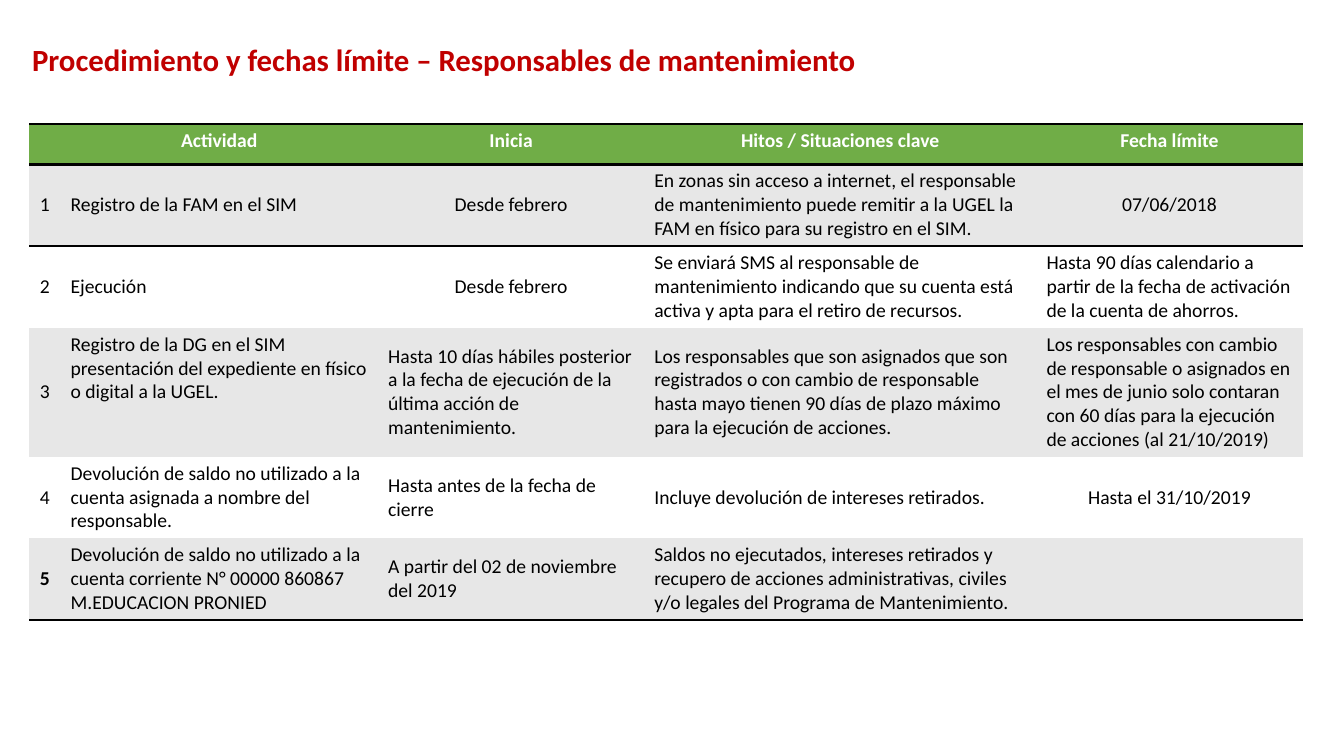
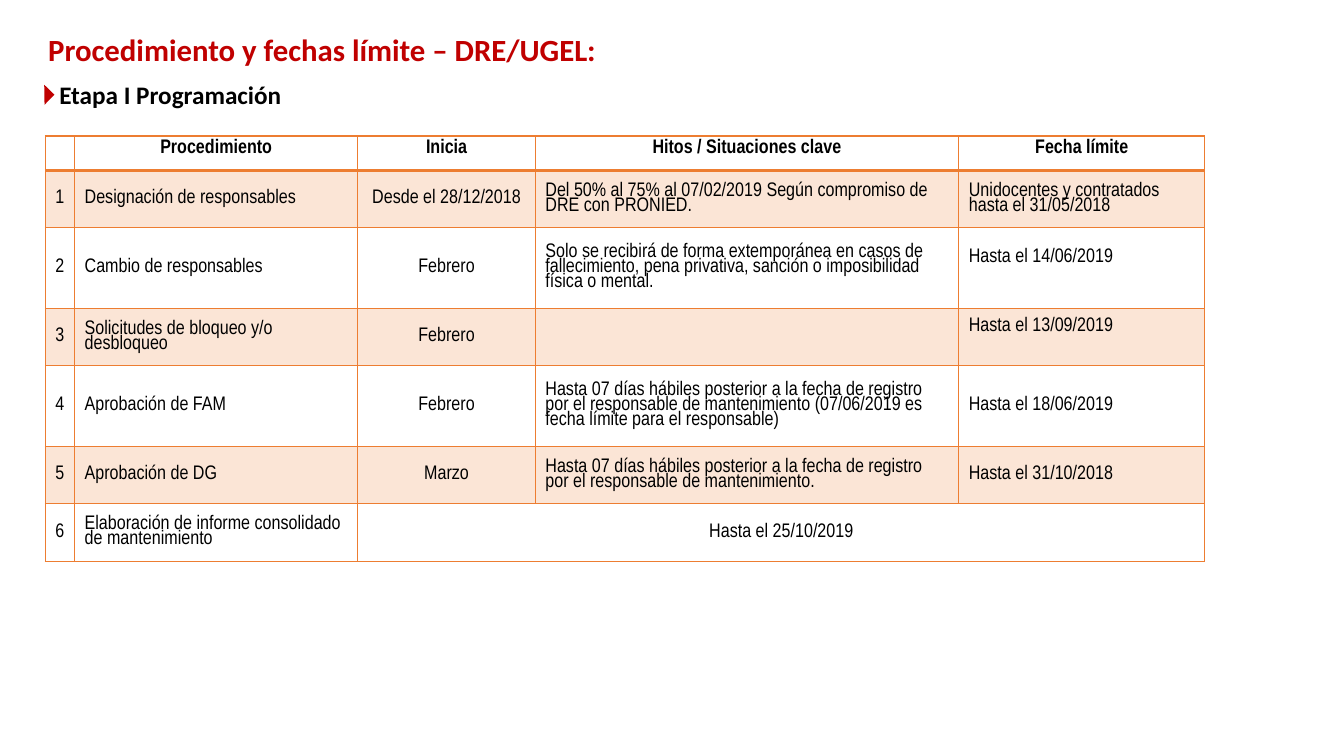
from lxml.etree import SubElement
from pptx import Presentation
from pptx.dml.color import RGBColor
from pptx.enum.shapes import MSO_SHAPE as Shape
from pptx.enum.text import MSO_ANCHOR as Anchor, PP_ALIGN as Align
from pptx.oxml.ns import qn
from pptx.util import Inches, Pt

RED, BLACK, WHITE = "C00000", "000000", "FFFFFF"
GREEN, GREY = "70AD47", "E7E7E7"
ORANGE, PEACH = "ED7D31", "FBE5D6"
PLAIN_STYLE = "{2D5ABB26-0587-4C30-8999-92F81FD0307C}"
MARGIN = 0.05

MAINTENANCE_ROWS = [
    ["", "Actividad", "Inicia", "Hitos / Situaciones clave", "Fecha límite"],
    ["1", "Registro de la FAM en el SIM", "Desde febrero",
     "En zonas sin acceso a internet, el responsable de mantenimiento puede "
     "remitir a la UGEL la FAM en físico para su registro en el SIM.",
     "07/06/2018"],
    ["2", "Ejecución", "Desde febrero",
     "Se enviará SMS al responsable de mantenimiento indicando que su cuenta "
     "está activa y apta para el retiro de recursos.",
     "Hasta 90 días calendario a partir de la fecha de activación de la "
     "cuenta de ahorros."],
    ["3", "Registro de la DG en el SIM presentación del expediente en físico "
     "o digital a la UGEL.",
     "Hasta 10 días hábiles posterior a la fecha de ejecución de la última "
     "acción de mantenimiento.",
     "Los responsables que son asignados que son registrados o con cambio de "
     "responsable hasta mayo tienen 90 días de plazo máximo para la ejecución "
     "de acciones.",
     "Los responsables con cambio de responsable o asignados en el mes de "
     "junio solo contaran con 60 días para la ejecución de acciones "
     "(al 21/10/2019)"],
    ["4", "Devolución de saldo no utilizado a la cuenta asignada a nombre del "
     "responsable.",
     "Hasta antes de la fecha de cierre",
     "Incluye devolución de intereses retirados.", "Hasta el 31/10/2019"],
    ["5", "Devolución de saldo no utilizado a la cuenta corriente "
     "N° 00000 860867 M.EDUCACION PRONIED",
     "A partir del 02 de noviembre del 2019",
     "Saldos no ejecutados, intereses retirados y recupero de acciones "
     "administrativas, civiles y/o legales del Programa de Mantenimiento.",
     ""],
]

PROGRAMMING_ROWS = [
    ["", "Procedimiento", "Inicia", "Hitos / Situaciones clave", "Fecha límite"],
    ["1", "Designación de responsables", "Desde el 28/12/2018",
     "Del 50% al 75% al 07/02/2019 Según compromiso de DRE con PRONIED.",
     "Unidocentes y contratados hasta el 31/05/2018"],
    ["2", "Cambio de responsables", "Febrero",
     "Solo se recibirá de forma extemporánea en casos de fallecimiento, pena "
     "privativa, sanción o imposibilidad física o mental.",
     "Hasta el 14/06/2019"],
    ["3", "Solicitudes de bloqueo y/o desbloqueo", "Febrero", "",
     "Hasta el 13/09/2019"],
    ["4", "Aprobación de FAM", "Febrero",
     "Hasta 07 días hábiles posterior a la fecha de registro por el "
     "responsable de mantenimiento (07/06/2019 es fecha límite para el "
     "responsable)",
     "Hasta el 18/06/2019"],
    ["5", "Aprobación de DG", "Marzo",
     "Hasta 07 días hábiles posterior a la fecha de registro por el "
     "responsable de mantenimiento.",
     "Hasta el 31/10/2018"],
    ["6", "Elaboración de informe consolidado de mantenimiento",
     "Hasta el 25/10/2019", "", ""],
]


def rgb(value):
    return RGBColor.from_string(value)


def style(paragraph, size, color, bold=False, font="Calibri"):
    paragraph.font.size = Pt(size)
    paragraph.font.name = font
    paragraph.font.bold = bold
    paragraph.font.color.rgb = rgb(color)


def add_heading(slide, box, text, size=22, color=RED):
    frame = slide.shapes.add_textbox(*map(Inches, box)).text_frame
    frame.word_wrap = False
    paragraph = frame.paragraphs[0]
    paragraph.text = text
    style(paragraph, size, color, bold=True)


def set_borders(cell, borders):
    """Draw borders given as {side: (colour, points)}, sides being L, R, T, B."""
    properties = cell._tc.get_or_add_tcPr()
    for side in "LRTB":
        if side in borders:
            color, points = borders[side]
            line = SubElement(properties, qn(f"a:ln{side}"), w=str(Pt(points)))
            fill = SubElement(line, qn("a:solidFill"))
            SubElement(fill, qn("a:srgbClr"), val=color)


def fill_cell(cell, color):
    if color:
        cell.fill.solid()
        cell.fill.fore_color.rgb = rgb(color)
    else:
        cell.fill.background()


def add_schedule(slide, left, top, widths, heights, rows, centred, raised,
                 header, bands, borders_of, font, line_spacing=None,
                 bold_cells=()):
    """Add a table.

    centred tells whether a body cell is centred; raised maps cells to the
    extra space kept under their text; header is (fill, text colour); bands
    are the alternating body fills; borders_of gives the borders of a row.
    """
    frame = slide.shapes.add_table(
        len(rows), len(widths), Inches(left), Inches(top),
        Inches(sum(widths)), Inches(sum(heights)))
    frame.element.find(".//" + qn("a:tableStyleId")).text = PLAIN_STYLE
    table = frame.table
    for column, width in zip(table.columns, widths):
        column.width = Inches(width)
    for r, (texts, height) in enumerate(zip(rows, heights)):
        table.rows[r].height = Inches(height)
        is_header = r == 0
        fill, color = header if is_header else (bands[(r - 1) % 2], BLACK)
        for c, text in enumerate(texts):
            cell = table.cell(r, c)
            set_borders(cell, borders_of(r))
            fill_cell(cell, fill)
            cell.vertical_anchor = Anchor.TOP if is_header else Anchor.MIDDLE
            cell.margin_bottom = Inches(MARGIN + raised.get((r, c), 0))
            paragraph = cell.text_frame.paragraphs[0]
            if text:
                paragraph.text = text
            else:
                SubElement(paragraph._p, qn("a:endParaRPr"), sz="1400")
            in_middle = is_header or centred(r, c)
            paragraph.alignment = Align.CENTER if in_middle else Align.LEFT
            if line_spacing:
                paragraph.line_spacing = line_spacing
            style(paragraph, 14, color, is_header or (r, c) in bold_cells, font)
    return table


def build_maintenance_slide(slide):
    centred_cells = {(1, 2), (2, 2), (1, 4), (4, 4)}
    rule = (BLACK, 2)
    borders = {0: {"T": rule, "B": rule}, 1: {"T": rule},
               len(MAINTENANCE_ROWS) - 1: {"B": rule}}
    add_heading(slide, (0.22, 0.36, 8.46, 0.47),
                "Procedimiento y fechas límite – Responsables de mantenimiento")
    add_schedule(
        slide, 0.29, 1.23, [0.31, 3.15, 2.64, 3.89, 2.64],
        [0.4, 0.81, 0.81, 1.28, 0.81, 0.81], MAINTENANCE_ROWS,
        centred=lambda r, c: c == 0 or (r, c) in centred_cells,
        raised={(3, 1): 0.47}, header=(GREEN, WHITE), bands=(GREY, WHITE),
        borders_of=lambda r: borders.get(r, {}), font="Calibri",
        bold_cells={(5, 0)})


def add_stage_heading(slide, left, top, text):
    marker = slide.shapes.add_shape(
        Shape.RIGHT_TRIANGLE, Inches(left), Inches(top + 0.13),
        Inches(0.14), Inches(0.14))
    marker.rotation = 224.1
    marker.shadow.inherit = False
    marker.fill.solid()
    marker.fill.fore_color.rgb = rgb(RED)
    marker.line.fill.background()
    add_heading(slide, (left + 0.12, top, 2.42, 0.4), text, 18, BLACK)


def build_programming_slide(slide):
    def borders_of(row):
        sides = dict.fromkeys("LRTB", (ORANGE, 1))
        if row < 2:
            sides["B" if row == 0 else "T"] = (ORANGE, 2)
        return sides

    add_heading(slide, (0.38, 0.26, 5.7, 0.47),
                "Procedimiento y fechas límite – DRE/UGEL:")
    add_stage_heading(slide, 0.37, 0.74, "Etapa I Programación")
    table = add_schedule(
        slide, 0.45, 1.35, [0.29, 2.81, 1.76, 4.2, 2.44],
        [0.34, 0.57, 0.8, 0.57, 0.8, 0.57, 0.57], PROGRAMMING_ROWS,
        centred=lambda r, c: c == 2, raised={(2, 4): 0.2, (3, 4): 0.2},
        header=(None, BLACK), bands=(PEACH, None), borders_of=borders_of,
        font="Arial Narrow", line_spacing=0.82)
    table.cell(6, 2).merge(table.cell(6, 4))


def main():
    deck = Presentation()
    deck.slide_width, deck.slide_height = Inches(13.33), Inches(7.5)
    for build in (build_maintenance_slide, build_programming_slide):
        build(deck.slides.add_slide(deck.slide_layouts[6]))
    deck.save("out.pptx")


if __name__ == "__main__":
    main()
